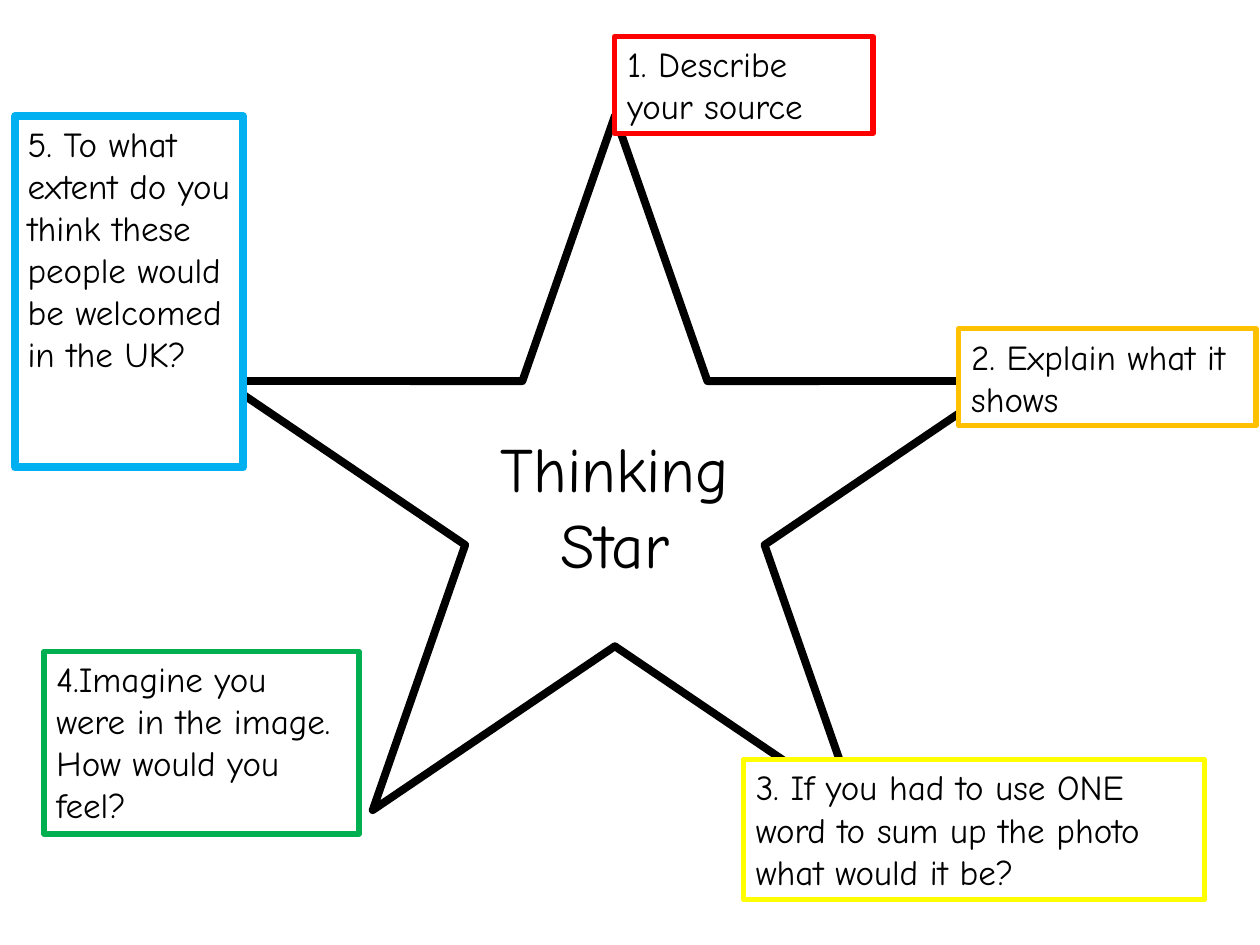
from pptx import Presentation
from pptx.dml.color import RGBColor
from pptx.enum.shapes import MSO_SHAPE
from pptx.enum.text import MSO_ANCHOR, MSO_AUTO_SIZE, PP_ALIGN
from pptx.util import Inches, Pt

WIDTH, HEIGHT = Inches(10), Inches(7.5)
FONT = "Comic Neue"
COLORS = {
    "ink": "000000",
    "paper": "FFFFFF",
    "describe": "FF0000",
    "explain": "FFC000",
    "sum_up": "FFFF00",
    "welcome": "00B0F0",
    "imagine": "00B050",
}

QUESTIONS = [
    ("describe", "1. Describe your source", (48.8, 3.87, 20.5, 10.27), 3),
    ("explain", "2. Explain what it shows", (76.1, 34.8, 23.6, 10.27), 3),
    ("sum_up", "3. If you had to use ONE word to sum up the photo what would it be?",
     (59, 80.4, 36.6, 14.8), 3),
    ("welcome", "5. To what extent do you think these people would be welcomed in the UK?",
     (1.2, 12.27, 18.1, 37.2), 4.5),
    ("imagine", "4.Imagine you were in the image. How would you feel?",
     (3.5, 68.93, 25, 19.33), 3),
]


def color(name):
    return RGBColor.from_string(COLORS[name])


def place(percent):
    sides = (WIDTH, HEIGHT, WIDTH, HEIGHT)
    return [round(side * share / 100) for side, share in zip(sides, percent)]


def write(shape, text, size=20, align=PP_ALIGN.LEFT, ink="ink"):
    frame = shape.text_frame
    frame.word_wrap = True
    frame.auto_size = MSO_AUTO_SIZE.SHAPE_TO_FIT_TEXT
    frame.vertical_anchor = MSO_ANCHOR.TOP
    paragraph = frame.paragraphs[0]
    paragraph.alignment = align
    run = paragraph.add_run()
    run.text = text
    run.font.name = FONT
    run.font.size = Pt(size)
    run.font.color.rgb = color(ink)


def add_outlined(slide, preset, percent, outline, weight):
    shape = slide.shapes.add_shape(preset, *place(percent))
    shape.shadow.inherit = False
    shape.fill.solid()
    shape.fill.fore_color.rgb = color("paper")
    shape.line.color.rgb = color(outline)
    shape.line.width = Pt(weight)
    return shape


def add_star(slide):
    return add_outlined(slide, MSO_SHAPE.STAR_5_POINT, (17.7, 12.27, 62.2, 73.47), "ink", 4.5)


def set_title(slide, text, percent, star):
    title = slide.shapes.title
    title.left, title.top, title.width, title.height = place(percent)
    write(title, text, size=36, align=PP_ALIGN.CENTER)
    star._element.addnext(title._element)


def add_question(slide, outline, text, percent, weight):
    box = add_outlined(slide, MSO_SHAPE.RECTANGLE, percent, outline, weight)
    write(box, text)
    return box


def main():
    deck = Presentation()
    deck.slide_width, deck.slide_height = WIDTH, HEIGHT
    slide = deck.slides.add_slide(deck.slide_layouts[5])
    star = add_star(slide)
    set_title(slide, "Thinking Star", (37, 44.8, 23.6, 17.47), star)
    for question in QUESTIONS:
        box = add_question(slide, *question)
    box.fill.background()
    deck.save("out.pptx")


if __name__ == "__main__":
    main()
